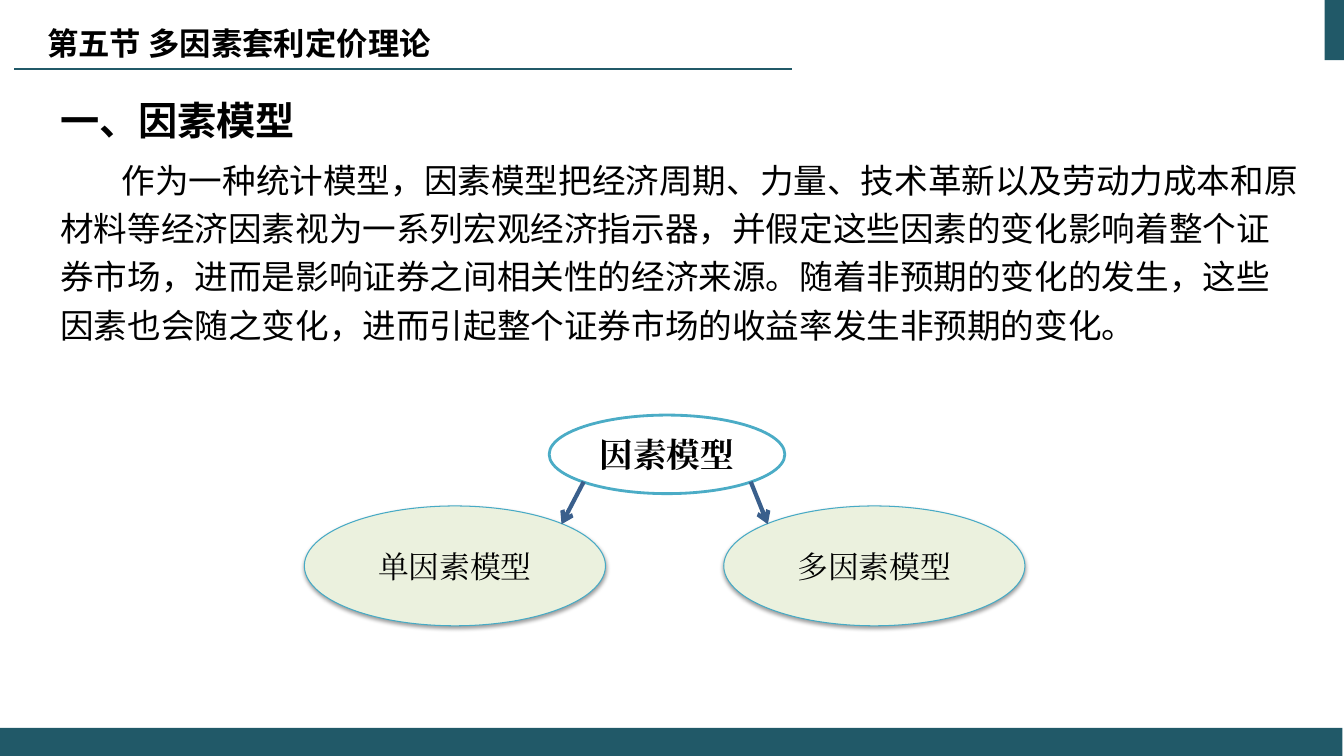
from lxml.etree import SubElement
from pptx import Presentation
from pptx.dml.color import RGBColor
from pptx.enum.shapes import MSO_CONNECTOR as Link, MSO_SHAPE as Preset
from pptx.enum.text import MSO_ANCHOR as Anchor, PP_ALIGN as Align
from pptx.oxml.ns import qn
from pptx.util import Cm, Pt

COLORS = {key: RGBColor.from_string(value) for key, value in {
    "teal": "215968", "black": "000000", "aqua": "4BACC6",
    "rim": "46AAC5", "leaf": "EBF1DE", "arrow": "3A5F8C",
}.items()}


def write(paragraph, text, *, font, size, bold=False, align=Align.LEFT,
          indent=None, small_caps=False):
    """Fill a paragraph; indent is (left margin, first line) for body text."""
    if indent:
        props = paragraph._p.get_or_add_pPr()
        props.set("marL", str(indent[0]))
        props.set("indent", str(indent[1]))
        paragraph.line_spacing = 1.2
    paragraph.alignment = align
    run = paragraph.add_run()
    run.text = text
    run.font.name = font
    run.font.size = Pt(size)
    run.font.bold = bold
    run.font.color.rgb = COLORS["black"]
    run_props = run.font._element
    SubElement(run_props, qn("a:ea"), typeface=font)
    if small_caps:
        run_props.set("cap", "small")


def add_line(start, end, color, width):
    line = slide.shapes.add_connector(Link.STRAIGHT, *map(Cm, start + end))
    line.line.color.rgb = COLORS[color]
    line.line.width = Pt(width)
    SubElement(line._element.spPr, qn("a:effectLst"))
    return line


prs = Presentation()
prs.slide_width, prs.slide_height = Cm(33.87), Cm(19.05)
slide = prs.slides.add_slide(prs.slide_layouts[6])

# Frame
for place in ((0, 18.34, 33.83, 0.71), (33.38, 0, 0.49, 1.52)):
    band = slide.shapes.add_shape(Preset.RECTANGLE, *map(Cm, place))
    band.shadow.inherit = False
    band.fill.solid()
    band.fill.fore_color.rgb = COLORS["teal"]
    band.line.fill.background()
add_line((0.36, 1.73), (19.96, 1.73), "teal", 1.5)

# Heading and body
body = slide.shapes.add_textbox(Cm(0), Cm(2.06), Cm(33.07), Cm(11.73)).text_frame
body.word_wrap = True
write(body.paragraphs[0], "一、因素模型", font="TeX Gyre Schola", size=28,
      bold=True, indent=(Cm(1.27), 0))
explanation = body.add_paragraph()
explanation.space_before = Pt(6)
write(explanation,
      "作为一种统计模型，因素模型把经济周期、力量、技术革新以及劳动力成本和原材料等"
      "经济因素视为一系列宏观经济指示器，并假定这些因素的变化影响着整个证券市场，"
      "进而是影响证券之间相关性的经济来源。随着非预期的变化的发生，这些因素也会随之变化，"
      "进而引起整个证券市场的收益率发生非预期的变化。",
      font="TeX Gyre Schola", size=24, indent=(Cm(1.27), Cm(1.55)))

section = slide.shapes.add_textbox(Cm(0.94), Cm(0.33), Cm(31.62), Cm(1.4)).text_frame
section.word_wrap = True
section.vertical_anchor = Anchor.BOTTOM
write(section.paragraphs[0], "第五节 多因素套利定价理论",
      font="Noto Sans CJK SC", size=28, bold=True, small_caps=True)

# Model tree
models = (
    ("因素模型", (13.84, 10.46, 5.94, 1.98), True),
    ("单因素模型", (7.67, 12.75, 7.59, 3.02), False),
    ("多因素模型", (18.24, 12.75, 7.59, 3.02), False),
)
for label, place, is_root in models:
    model = slide.shapes.add_shape(Preset.OVAL, *map(Cm, place))
    model.shadow.inherit = False
    model.line.color.rgb = COLORS["aqua" if is_root else "rim"]
    model.line.width = Pt(2 if is_root else 0.75)
    if is_root:
        model.fill.background()
    else:
        model.fill.solid()
        model.fill.fore_color.rgb = COLORS["leaf"]
        effects = model._element.spPr.find(qn("a:effectLst"))
        shadow = SubElement(effects, qn("a:outerShdw"), blurRad=str(Pt(3.1)),
                            dist=str(Pt(1.6)), dir="5400000", rotWithShape="0")
        tint = SubElement(shadow, qn("a:srgbClr"), val=str(COLORS["black"]))
        SubElement(tint, qn("a:alpha"), val="38000")
    model.text_frame.word_wrap = True
    model.text_frame.vertical_anchor = Anchor.MIDDLE
    write(model.text_frame.paragraphs[0], label, font="Times New Roman",
          size=24 if is_root else 22, bold=is_root, align=Align.CENTER)

for start_x, end_x in ((14.71, 14.15), (18.92, 19.35)):
    branch = add_line((start_x, 12.14), (end_x, 13.21), "arrow", 3)
    SubElement(branch._element.spPr.find(qn("a:ln")), qn("a:tailEnd"), type="arrow")

prs.save("out.pptx")
